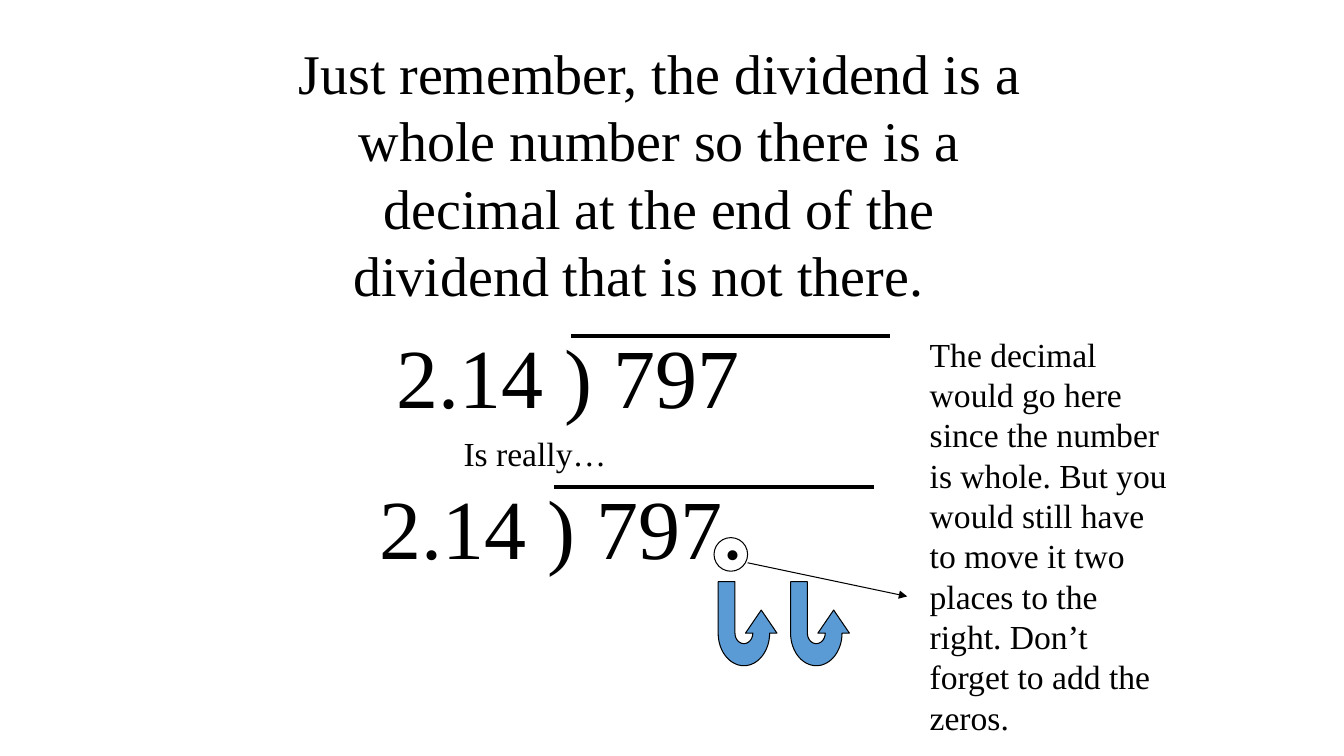
import math

from lxml import etree
from pptx import Presentation
from pptx import util as u
from pptx.dml.color import RGBColor
from pptx.enum import shapes, text
from pptx.oxml.ns import qn

PX = 9525  # EMU per px, 96 px to the inch
FONT, BLACK, BLUE = "Times New Roman", "000000", "5B9BD5"

HEADING = ("Just remember, the dividend is a whole number so there is a decimal "
           "at the end of the dividend that is not there.   ")
EXPLANATION = ("The decimal would go here since the number is whole. But you would "
               "still have to move it two places to the right. Don’t forget to add "
               "the zeros.")
DIVISIONS = [("2.14 ) 797", 368, 304), ("2.14 ) 797.", 352, 448)]
DECIMAL_RING = (680, 512, 32, 32)
POINTER = (712, 536, 864, 568)
HOP_LEFTS, HOP_TOP = (684, 753), 554


def px(*lengths):
    return [u.Emu(round(length * PX)) for length in lengths]


def color(hex_code):
    return RGBColor.from_string(hex_code)


def write(shape, words, size, align=text.PP_ALIGN.LEFT):
    frame = shape.text_frame
    frame.word_wrap = True
    frame.auto_size = text.MSO_AUTO_SIZE.SHAPE_TO_FIT_TEXT
    frame.vertical_anchor = text.MSO_ANCHOR.TOP
    paragraph = frame.paragraphs[0]
    paragraph.alignment = align
    paragraph.line_spacing = u.Pt(size * 1.2)
    paragraph.space_before = u.Pt(0)
    run = paragraph.add_run()
    run.text = words
    run.font.name, run.font.size = FONT, u.Pt(size)
    run.font.color.rgb = color(BLACK)


def text_box(slide, box, words, size):
    write(slide.shapes.add_textbox(*px(*box)), words, size)


def outline(shape, width):
    shape.line.color.rgb = color(BLACK)
    shape.line.width = u.Pt(width)


def straight_line(slide, ends, width, arrow=False):
    line = slide.shapes.add_connector(shapes.MSO_CONNECTOR.STRAIGHT, *px(*ends))
    outline(line, width)
    if arrow:
        etree.SubElement(line.line._get_or_add_ln(), qn("a:tailEnd"), type="triangle")
    etree.SubElement(line._element.spPr, qn("a:effectLst"))


def half_ellipse(center_x, center_y, radius_x, radius_y, degrees):
    return [(center_x + radius_x * math.cos(math.radians(d)),
             center_y + radius_y * math.sin(math.radians(d))) for d in degrees]


def hop_arrow(slide, left, top):
    """Draw an arrow that drops, turns at the bottom and points up."""
    points = ([(41, 27), (56, 49), (49, 49)]
              + half_ellipse(24.5, 49, 24.5, 31, range(0, 181, 6))
              + [(0, 0), (16, 0)]
              + half_ellipse(24.5, 49, 8.5, 10, range(180, -1, -12))
              + [(26, 49)])
    start, *rest = [px(left + x, top + y) for x, y in points]
    builder = slide.shapes.build_freeform(*start)
    builder.add_line_segments(rest, close=True)
    hop = builder.convert_to_shape()
    hop.shadow.inherit = False
    hop.fill.solid()
    hop.fill.fore_color.rgb = color(BLUE)
    outline(hop, 0.75)


def main():
    deck = Presentation()
    deck.slide_width, deck.slide_height = px(1280, 720)
    slide = deck.slides.add_slide(deck.slide_layouts[5])

    heading = slide.shapes.title
    heading.left, heading.top, heading.width, heading.height = px(264, 32, 728, 266)
    write(heading, HEADING, 40, text.PP_ALIGN.CENTER)

    for problem, left, top in DIVISIONS:
        text_box(slide, (left, top, 568, 106), problem, 60)
        straight_line(slide, (left + 176, top + 16, left + 480, top + 16), 3)
    text_box(slide, (432, 408, 272, 48), "Is really…", 24)
    text_box(slide, (876, 313, 248, 397), EXPLANATION, 24)

    ring = slide.shapes.add_shape(shapes.MSO_SHAPE.OVAL, *px(*DECIMAL_RING))
    ring.shadow.inherit = False
    ring.fill.background()
    outline(ring, 0.75)
    straight_line(slide, POINTER, 0.75, arrow=True)

    for left in HOP_LEFTS:
        hop_arrow(slide, left, HOP_TOP)
    deck.save("out.pptx")


if __name__ == "__main__":
    main()
